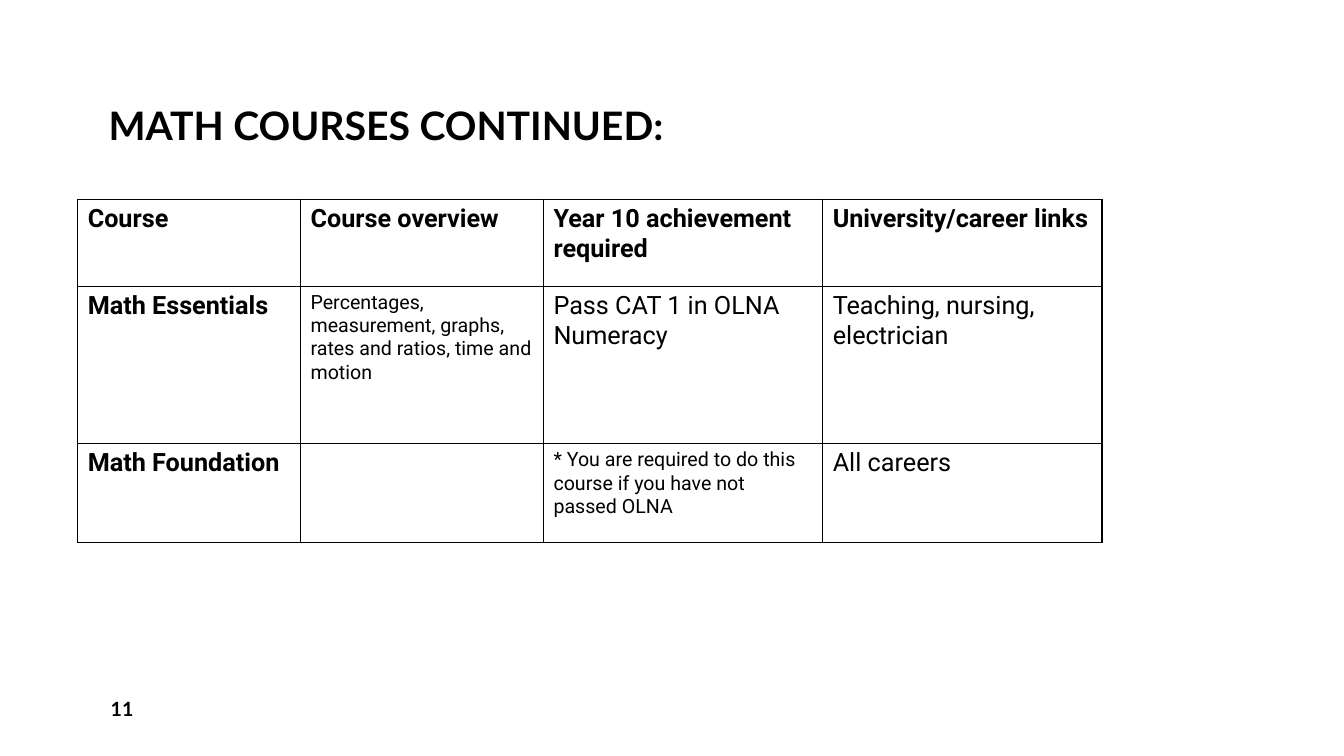
from lxml import etree
from pptx import Presentation, util as u
from pptx.dml.color import RGBColor
from pptx.enum import text
from pptx.oxml import ns

COLOURS = {"ink": "000000", "paper": "FFFFFF"}
HEADING_FONT, TABLE_FONT = "Lato", "Roboto"


class CourseSlide:
    """Style and current slide; lengths are percentages of the slide's size."""

    def __init__(self, presentation):
        self.width = presentation.slide_width
        self.height = presentation.slide_height
        self.slide = presentation.slides.add_slide(presentation.slide_layouts[6])
        background = self.slide.background.fill
        background.solid()
        background.fore_color.rgb = RGBColor.from_string(COLOURS["paper"])

    def across(self, share):
        return u.Emu(round(self.width * share / 100))

    def down(self, share):
        return u.Emu(round(self.height * share / 100))

    def style(self, paragraph, name, size, bold):
        font = paragraph.font
        font.name, font.size, font.bold = name, u.Pt(size), bold
        font.color.rgb = RGBColor.from_string(COLOURS["ink"])

    def label(self, words, left, top, width, height, size, anchor, spacing=1.0):
        shape = self.slide.shapes.add_textbox(
            self.across(left), self.down(top), self.across(width), self.down(height))
        frame = shape.text_frame
        frame.word_wrap = True
        frame.vertical_anchor = anchor
        paragraph = frame.paragraphs[0]
        paragraph.text = words
        paragraph.line_spacing = spacing
        self.style(paragraph, HEADING_FONT, size, True)

    def border(self, cell, points=1):
        properties = cell._tc.get_or_add_tcPr()
        for position, side in enumerate(("lnL", "lnR", "lnT", "lnB")):
            line = etree.Element(ns.qn(f"a:{side}"), w=str(u.Pt(points)))
            fill = etree.SubElement(line, ns.qn("a:solidFill"))
            etree.SubElement(fill, ns.qn("a:srgbClr"), val=COLOURS["ink"])
            properties.insert(position, line)

    def table(self, rows, left, top, widths, heights):
        table = self.slide.shapes.add_table(
            len(heights), len(widths), self.across(left), self.down(top),
            self.across(sum(widths)), self.down(sum(heights))).table
        for column, width in zip(table.columns, widths):
            column.width = self.across(width)
        for row, height in zip(table.rows, heights):
            row.height = self.down(height)
        for r, row in enumerate(rows):
            for c, (words, size) in enumerate(row):
                cell = table.cell(r, c)
                cell.text = words
                cell.fill.background()
                self.border(cell)
                # Header row and course names are bold
                self.style(cell.text_frame.paragraphs[0], TABLE_FONT, size,
                           r == 0 or c == 0)


def main():
    presentation = Presentation()
    presentation.slide_width = u.Inches(13.33)
    presentation.slide_height = u.Inches(7.5)
    page = CourseSlide(presentation)

    # Title
    page.label("MATH COURSES CONTINUED:", 7.35, 1.07, 68.04, 19.33, 28,
               text.MSO_ANCHOR.BOTTOM, spacing=0.9)

    # Course table: each cell is its wording and text size
    normal, small = 18, 14
    courses = [
        [("Course", normal), ("Course overview", normal),
         ("Year 10 achievement required", normal),
         ("University/career links", normal)],
        [("Math Essentials", normal),
         ("Percentages, measurement, graphs, rates and ratios, time and motion", small),
         ("Pass CAT 1 in OLNA Numeracy", normal),
         ("Teaching, nursing, electrician", normal)],
        [("Math Foundation", normal), ("", normal),
         ("* You are required to do this course if you have not passed OLNA", small),
         ("All careers", normal)],
    ]
    page.table(courses, 5.78, 26.4, widths=(16.58, 18.08, 20.78, 20.78),
               heights=(11.47, 20.8, 13.07))

    # Page number
    page.label("11", 7.5, 91.07, 21.9, 5.33, 14, text.MSO_ANCHOR.MIDDLE)

    presentation.save("out.pptx")


if __name__ == "__main__":
    main()
